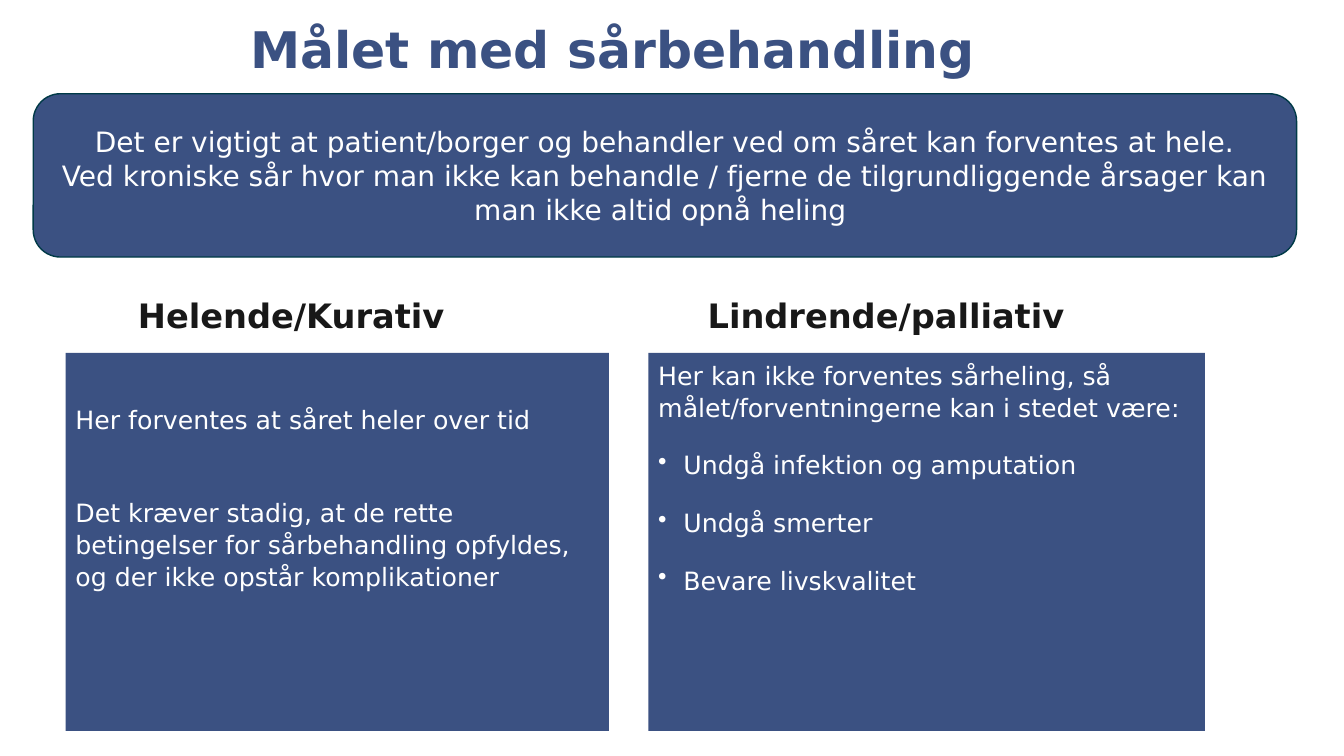
from dataclasses import dataclass

from lxml import etree
from pptx import Presentation
from pptx.dml.color import RGBColor
from pptx.enum import shapes, text
from pptx.oxml.ns import qn
from pptx.util import Inches, Pt


@dataclass(frozen=True)
class Theme:
    font: str = "DejaVu Sans"
    blue: str = "3B5182"
    outline: str = "003A47"
    dark: str = "181818"
    white: str = "FFFFFF"
    title: int = 36
    heading: int = 24
    message: int = 20
    body: int = 18


def write(paragraph, content, *, font, size, color, bold=False, bullet=False,
          align=text.PP_ALIGN.LEFT, line=None, before=0, after=0):
    """Fill one paragraph and format it."""
    if bullet:
        props = paragraph._p.get_or_add_pPr()
        props.set("marL", str(Inches(0.25)))
        props.set("indent", str(-Inches(0.25)))
        etree.SubElement(props, qn("a:buChar")).set("char", "•")
    paragraph.text = content
    paragraph.alignment = align
    if line:
        paragraph.line_spacing = line
    paragraph.space_before, paragraph.space_after = Pt(before), Pt(after)
    paragraph.font.name = font
    paragraph.font.size = Pt(size)
    paragraph.font.bold = bold
    paragraph.font.color.rgb = RGBColor.from_string(color)


class SlideBuilder:
    def __init__(self, slide, theme):
        self.slide, self.theme = slide, theme

    def fill_text(self, frame, paragraphs, **style):
        """Write (content, own format) pairs that share a style."""
        frame.word_wrap = True
        for i, (content, own) in enumerate(paragraphs):
            paragraph = frame.add_paragraph() if i else frame.paragraphs[0]
            write(paragraph, content, font=self.theme.font, **{**style, **own})

    def title(self, content, *box):
        title = self.slide.shapes.title
        title.left, title.top, title.width, title.height = map(Inches, box)
        frame = title.text_frame
        frame.auto_size = text.MSO_AUTO_SIZE.NONE
        frame.vertical_anchor = text.MSO_ANCHOR.BOTTOM
        frame.margin_left = frame.margin_right = 0
        frame.margin_top = frame.margin_bottom = 0
        self.fill_text(frame, [(content, {})], size=self.theme.title,
                       color=self.theme.blue, bold=True, line=0.9)

    def heading(self, content, *box):
        heading = self.slide.shapes.add_textbox(*map(Inches, box))
        self.fill_text(heading.text_frame, [(content, {})], bold=True,
                       size=self.theme.heading, color=self.theme.dark)

    def panel(self, kind, paragraphs, *box, outline=None, top_inset=0.05,
              anchor=text.MSO_ANCHOR.TOP, **style):
        panel = self.slide.shapes.add_shape(kind, *map(Inches, box))
        panel.shadow.inherit = False
        panel.fill.solid()
        panel.fill.fore_color.rgb = RGBColor.from_string(self.theme.blue)
        if outline:
            panel.line.color.rgb = RGBColor.from_string(outline)
            panel.line.width = Pt(1)
        else:
            panel.line.fill.background()
        panel.text_frame.vertical_anchor = anchor
        panel.text_frame.margin_top = Inches(top_inset)
        self.fill_text(panel.text_frame, paragraphs,
                       color=self.theme.white, **style)


def main():
    deck = Presentation()
    deck.slide_width, deck.slide_height = Inches(13.33), Inches(7.5)
    theme = Theme()
    builder = SlideBuilder(deck.slides.add_slide(deck.slide_layouts[5]), theme)

    # Title and key message
    builder.title("Målet med sårbehandling", 2.48, -0.14, 8.38, 0.93)
    message = [
        "Det er vigtigt at patient/borger og behandler ved om såret kan "
        "forventes at hele.",
        "Ved kroniske sår hvor man ikke kan behandle / fjerne de "
        "tilgrundliggende årsager kan man ikke altid opnå heling ",
    ]
    builder.panel(shapes.MSO_SHAPE.ROUNDED_RECTANGLE,
                  [(sentence, {}) for sentence in message],
                  0.33, 0.93, 12.53, 1.62, outline=theme.outline,
                  anchor=text.MSO_ANCHOR.MIDDLE, size=theme.message,
                  align=text.PP_ALIGN.CENTER)

    # The two treatment goals: heading, heading left, card left, card width,
    # top inset, paragraphs
    healing = [
        ("Her forventes at såret heler over tid", {}),
        ("Det kræver stadig, at de rette betingelser for sårbehandling "
         "opfyldes, og der ikke opstår komplikationer", {"before": 43}),
    ]
    relief = [("Her kan ikke forventes sårheling, så målet/forventningerne "
               "kan i stedet være:", {"after": 8})]
    relief += [(aim, {"bullet": True, "before": 10, "after": 8})
               for aim in ("Undgå infektion og amputation", "Undgå smerter",
                           "Bevare livskvalitet")]
    goals = [
        ("Helende/Kurativ", 1.27, 0.65, 5.39, 0.49, healing),
        ("Lindrende/palliativ", 6.92, 6.43, 5.52, 0.05, relief),
    ]
    for name, name_left, card_left, card_width, inset, paragraphs in goals:
        builder.heading(name, name_left, 2.88, 4.16, 0.5)
        builder.panel(shapes.MSO_SHAPE.RECTANGLE, paragraphs,
                      card_left, 3.5, card_width, 3.75, top_inset=inset,
                      size=theme.body, line=1.07)

    deck.save("out.pptx")


if __name__ == "__main__":
    main()
